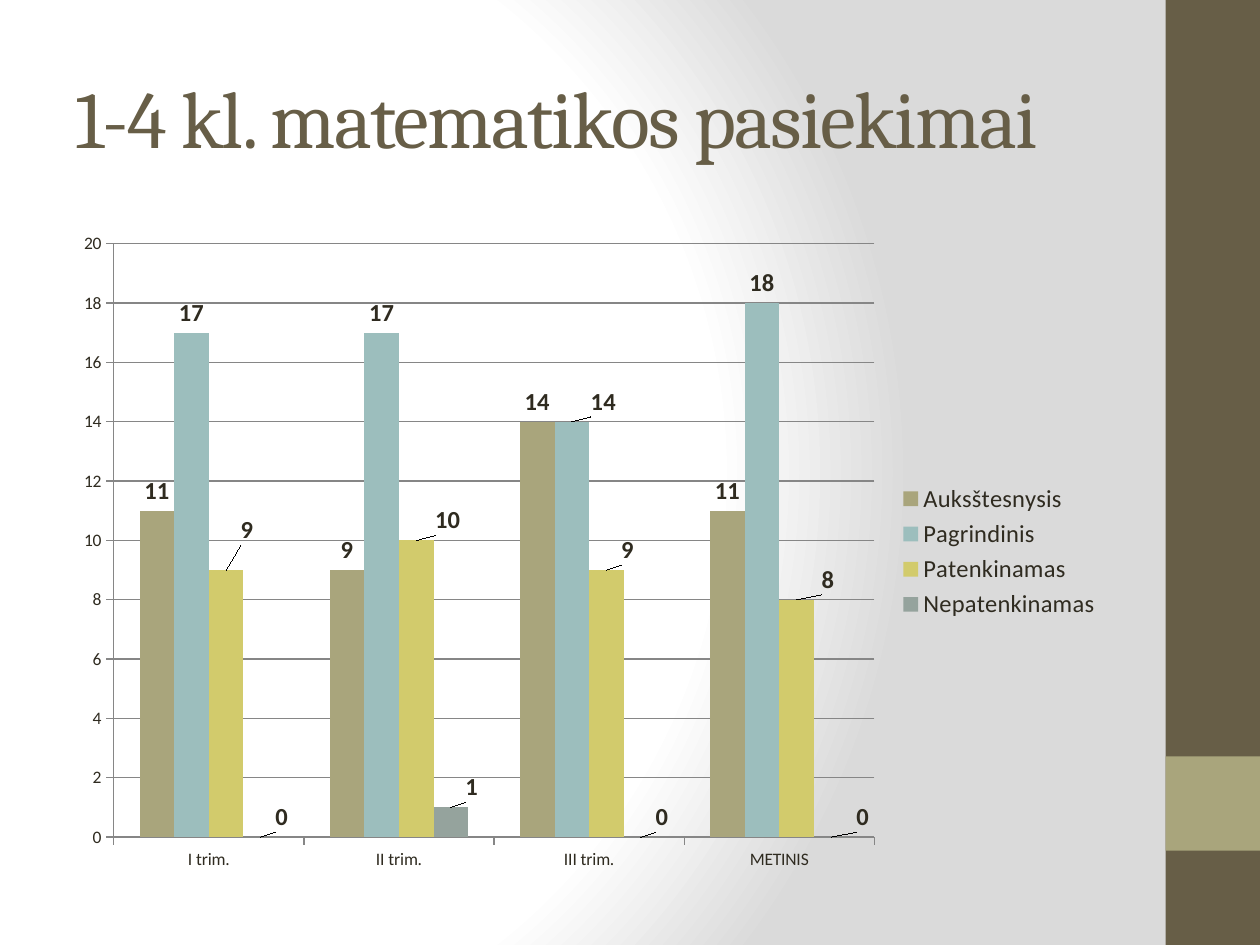
from pptx import Presentation
from pptx.chart.data import CategoryChartData
from pptx.dml.color import RGBColor
from pptx.enum import chart as ch, shapes, text
from pptx.oxml import parse_xml
from pptx.oxml.ns import nsdecls
from pptx.util import Cm, Pt

BROWN, SAND, INK, GRID = "675E47", "A9A57C", "2F2B20", "868686"
TERMS = ["I trim.", "II trim.", "III trim.", "METINIS"]
# name, colour, values, label shifts {point: (x, y)} as shares of the chart
LEVELS = [
    ("Auksštesnysis", SAND, (11, 9, 14, 11), {}),
    ("Pagrindinis", "9CBEBD", (17, 17, 14, 18), {2: (0.03, 0)}),
    ("Patenkinamas", "D2CB6C", (9, 10, 9, 8),
     {0: (0.02, -0.03), 1: (0.03, 0), 2: (0.02, 0), 3: (0.03, 0)}),
    ("Nepatenkinamas", "95A39D", (0, 1, 0, 0),
     {0: (0.02, 0), 1: (0.02, 0), 2: (0.02, 0), 3: (0.03, 0)}),
]


def rgb(code):
    return RGBColor.from_string(code)


def style(font, size, color=INK, name="Calibri", bold=False):
    font.size, font.name, font.bold = Pt(size), name, bold
    font.color.rgb = rgb(color)


def backdrop(slide):
    slide.background.fill.gradient()
    old = slide.element.xpath("p:cSld/p:bg/p:bgPr/a:gradFill")[0]
    stops = "".join(
        f'<a:gs pos="{pos * 1000}"><a:srgbClr val="{color}"/></a:gs>'
        for pos, color in ((0, "FFFFFF"), (75, "FFFFFF"), (100, "DADADA")))
    new = parse_xml(
        f'<a:gradFill {nsdecls("a")} rotWithShape="1"><a:gsLst>{stops}</a:gsLst>'
        '<a:path path="circle"><a:fillToRect l="20000" t="50000" r="100000" '
        'b="50000"/></a:path></a:gradFill>')
    old.getparent().replace(old, new)


def band(slide, x, y, w, h):
    # Full-height strip with a lighter square, one side up from the foot
    for top, high, color in ((y, h, BROWN), (y + h - 2 * w, w, SAND)):
        box = slide.shapes.add_shape(shapes.MSO_SHAPE.RECTANGLE, x, top, w, high)
        box.shadow.inherit = False
        box.fill.solid()
        box.fill.fore_color.rgb = rgb(color)
        box.line.fill.background()


def heading(slide, x, y, w, h):
    title = slide.shapes.title
    title.left, title.top, title.width, title.height = x, y, w, h
    frame = title.text_frame
    frame.text = "1-4 kl. matematikos pasiekimai"
    frame.vertical_anchor = text.MSO_ANCHOR.MIDDLE
    para = frame.paragraphs[0]
    para.alignment = text.PP_ALIGN.LEFT
    run = para.runs[0]
    style(run.font, 46, BROWN, "Cambria")
    run.font._element.set("spc", "-100")


def labels(series, shifts):
    marks = series.data_labels
    marks.show_value = True
    marks.position = ch.XL_LABEL_POSITION.OUTSIDE_END
    style(marks.font, 14, bold=True)
    for point, (dx, dy) in shifts.items():
        mark = series.points[point].data_label
        style(mark.font, 14, bold=True)
        mark.position = ch.XL_LABEL_POSITION.OUTSIDE_END
        idx = marks._element.xpath(f"c:dLbl/c:idx[@val='{point}']")[0]
        idx.addnext(parse_xml(
            f'<c:layout {nsdecls("c")}><c:manualLayout><c:x val="{dx}"/>'
            f'<c:y val="{dy}"/></c:manualLayout></c:layout>'))


def graph(slide, x, y, w, h):
    data = CategoryChartData()
    data.categories = TERMS
    for name, _, vals, _ in LEVELS:
        data.add_series(name, vals)
    kind = ch.XL_CHART_TYPE.COLUMN_CLUSTERED
    chart = slide.shapes.add_chart(kind, x, y, w, h, data).chart
    chart.has_title = False
    style(chart.font, 10)

    # Axes and grid
    value = chart.value_axis
    value.minimum_scale, value.maximum_scale, value.major_unit = 0, 20, 2
    value.has_major_gridlines = True
    for axis in (chart.category_axis, value):
        axis.major_tick_mark = ch.XL_TICK_MARK.OUTSIDE
        axis.format.line.color.rgb = rgb(GRID)
    value.major_gridlines.format.line.color.rgb = rgb(GRID)

    # Columns
    plot = chart.plots[0]
    plot.gap_width, plot.overlap, plot.vary_by_categories = 150, 0, False
    for series, (_, color, _, shifts) in zip(plot.series, LEVELS):
        series.format.fill.solid()
        series.format.fill.fore_color.rgb = rgb(color)
        labels(series, shifts)

    # Legend
    chart.has_legend = True
    chart.legend.position = ch.XL_LEGEND_POSITION.RIGHT
    chart.legend.include_in_layout = False
    style(chart.legend.font, 14)


def main():
    deck = Presentation()
    deck.slide_width, deck.slide_height = Cm(25.4), Cm(19.05)
    slide = deck.slides.add_slide(deck.slide_layouts[5])
    backdrop(slide)
    band(slide, Cm(23.5), 0, Cm(1.9), deck.slide_height)
    heading(slide, Cm(1.27), Cm(0.76), Cm(21.17), Cm(3.18))
    graph(slide, Cm(1.27), Cm(4.45), Cm(21.17), Cm(13.34))
    deck.save("out.pptx")


if __name__ == "__main__":
    main()
